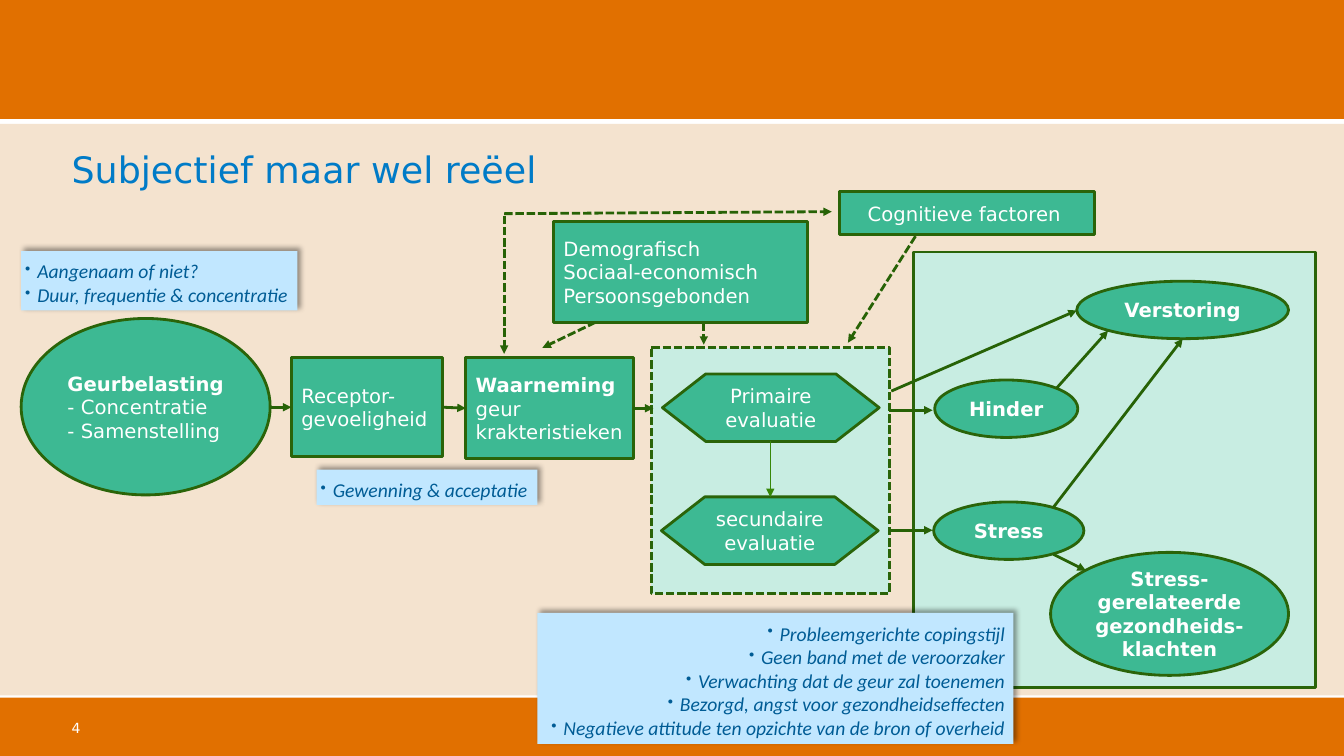
from dataclasses import dataclass

from pptx import Presentation, util as u
from pptx.dml.color import RGBColor
from pptx.enum import dml, shapes, text
from pptx.oxml import parse_xml
from pptx.oxml.ns import nsdecls


@dataclass(frozen=True)
class Theme:
    orange: str = "E17000"
    sand: str = "F4E3CF"
    green: str = "3DB993"
    mint: str = "C8EDE2"
    border: str = "2A6409"
    arrow: str = "276206"
    thin_arrow: str = "378709"
    sky: str = "C1E7FF"
    note_text: str = "005C95"
    title: str = "007BC7"
    white: str = "FFFFFF"
    font: str = "DejaVu Sans"
    note_font: str = "Calibri"
    title_pt: int = 26
    body_pt: int = 14
    number_pt: int = 10
    line_pt: float = 2
    thin_pt: float = 0.75


T = Theme()
PX = u.Inches(0.01)
S = shapes.MSO_SHAPE
LEFT, CENTER, RIGHT = text.PP_ALIGN.LEFT, text.PP_ALIGN.CENTER, text.PP_ALIGN.RIGHT
WIDTH, HEIGHT = 1333, 750

TITLE = "Subjectief maar wel reëel"
NUMBER = "4"

BANDS = [
    (0, 692, WIDTH, 58, T.orange),
    (0, 0, WIDTH, 118, T.orange),
    (0, 123, WIDTH, 567, T.sand),
]

PANELS = [
    ((646, 345, 236, 244), True),
    ((906, 250, 399, 432), False),
]

NODES = [
    (S.OVAL, (21, 316, 247, 175), LEFT,
     [[("Geurbelasting", True)], [("- Concentratie", False)], [("- Samenstelling", False)]]),
    (S.RECTANGLE, (289, 355, 150, 98), LEFT, [[("Receptor-gevoeligheid", False)]]),
    (S.RECTANGLE, (462, 355, 166, 100), LEFT,
     [[("Waarneming ", True), ("geur krakteristieken", False)]]),
    (S.FLOWCHART_PREPARATION, (657, 371, 215, 67), CENTER, [[("Primaire evaluatie", False)]]),
    (S.FLOWCHART_PREPARATION, (656, 493, 215, 67), CENTER, [[("secundaire evaluatie", False)]]),
    (S.OVAL, (1068, 279, 210, 57), CENTER, [[("Verstoring", True)]]),
    (S.OVAL, (927, 377, 142, 57), CENTER, [[("Hinder", True)]]),
    (S.OVAL, (926, 498, 149, 57), CENTER, [[("Stress", True)]]),
    (S.OVAL, (1042, 548, 236, 122), CENTER,
     [[("Stress-gerelateerde gezondheids-klachten", True)]]),
]

FACTORS = [
    (S.RECTANGLE, (833, 190, 253, 43), CENTER, [[("Cognitieve factoren ", False)]]),
    (S.RECTANGLE, (549, 220, 252, 100), LEFT,
     [[("Demografisch", False)], [("Sociaal-economisch", False)], [("Persoonsgebonden", False)]]),
]

SOLID_ARROWS = [
    (268, 404, 289, 404),
    (439, 404, 462, 405),
    (628, 405, 648, 405),
    (882, 407, 925, 407),
    (882, 526, 925, 526),
    (1048, 385, 1099, 328),
    (1045, 503, 1173, 336),
    (1045, 550, 1077, 566),
    (884, 388, 1068, 308),
]
DASHED_ARROWS = [
    (611, 310, 538, 345),
    (698, 309, 698, 342),
    (926, 206, 841, 340),
    (500, 214, 500, 351),
    (500, 212, 825, 210),
]
THIN_ARROW = (764, 438, 764, 493)

NOTES = [
    ((21, 249, 274, 59), LEFT, False, ["Aangenaam of niet?", "Duur, frequentie & concentratie"]),
    ((314, 466, 219, 35), LEFT, False, ["Gewenning & acceptatie"]),
    ((533, 608, 472, 130), RIGHT, True, [
        "Probleemgerichte copingstijl",
        "Geen band met de veroorzaker",
        "Verwachting dat de geur zal toenemen",
        "Bezorgd, angst voor gezondheidseffecten",
        "Negatieve attitude ten opzichte van de bron of overheid",
    ]),
]


def px(values):
    return [v * PX for v in values]


def set_margins(tf, left, top, right, bottom):
    tf.margin_left, tf.margin_top, tf.margin_right, tf.margin_bottom = px((left, top, right, bottom))


def add_run(p, content, color, size=T.body_pt, font=T.font, bold=False, italic=False):
    r = p.add_run()
    r.text = content
    r.font.name, r.font.size = font, u.Pt(size)
    r.font.bold, r.font.italic = bold, italic
    r.font.color.rgb = RGBColor.from_string(color)


def paragraphs(tf, items):
    for i, item in enumerate(items):
        yield (tf.add_paragraph() if i else tf.paragraphs[0]), item


def add_box(s, kind, box, fill, border=None, dashed=False):
    sp = s.shapes.add_shape(kind, *px(box))
    sp.shadow.inherit = False
    sp.fill.solid()
    sp.fill.fore_color.rgb = RGBColor.from_string(fill)
    if border:
        sp.line.color.rgb = RGBColor.from_string(border)
        sp.line.width = u.Pt(T.line_pt)
        if dashed:
            sp.line.dash_style = dml.MSO_LINE.SQUARE_DOT
    else:
        sp.line.fill.background()
    return sp


def add_node(s, kind, box, align, lines):
    tf = add_box(s, kind, box, T.green, T.border).text_frame
    tf.word_wrap = True
    tf.vertical_anchor = text.MSO_ANCHOR.MIDDLE
    if align == LEFT:
        tf.margin_right = 0
    for p, runs in paragraphs(tf, lines):
        p.alignment = align
        for content, bold in runs:
            add_run(p, content, T.white, bold=bold)


def add_arrow(s, ends, color=T.arrow, width=T.line_pt, dashed=False):
    c = s.shapes.add_connector(shapes.MSO_CONNECTOR.STRAIGHT, *px(ends))
    c.line.color.rgb = RGBColor.from_string(color)
    c.line.width = u.Pt(width)
    if dashed:
        c.line.dash_style = dml.MSO_LINE.SQUARE_DOT
    c.line._get_or_add_ln().append(parse_xml(f'<a:tailEnd {nsdecls("a")} type="triangle"/>'))
    c._element.spPr.append(parse_xml(f'<a:effectLst {nsdecls("a")}/>'))


def add_note(s, box, align, wrap, lines):
    sp = add_box(s, S.RECTANGLE, box, T.sky)
    sp._element.spPr.find("{*}effectLst").append(parse_xml(
        f'<a:outerShdw {nsdecls("a")} blurRad="{u.Pt(4)}" dist="{u.Pt(3)}" dir="18900000" '
        'algn="bl" rotWithShape="0"><a:srgbClr val="000000"><a:alpha val="40000"/>'
        '</a:srgbClr></a:outerShdw>'))
    tf = sp.text_frame
    set_margins(tf, 4, 8, 8, 4)
    tf.word_wrap = wrap
    tf.auto_size = text.MSO_AUTO_SIZE.SHAPE_TO_FIT_TEXT
    tf.vertical_anchor = text.MSO_ANCHOR.MIDDLE
    for p, line in paragraphs(tf, lines):
        p.alignment = align
        pPr = p._p.get_or_add_pPr()
        pPr.set("marL", str(12 * PX))
        pPr.set("indent", str(-12 * PX))
        for bullet in ('buSzPct {} val="79000"', 'buChar {} char="•"'):
            pPr.append(parse_xml(f'<a:{bullet.format(nsdecls("a"))}/>'))
        add_run(p, line, T.note_text, font=T.note_font, italic=True)


def main():
    prs = Presentation()
    prs.slide_width, prs.slide_height = px((WIDTH, HEIGHT))
    s = prs.slides.add_slide(prs.slide_layouts[5])
    for *box, fill in BANDS:
        add_box(s, S.RECTANGLE, box, fill)

    title = s.shapes.title
    title.left, title.top, title.width, title.height = px((71, 140, 1192, 49))
    tf = title.text_frame
    set_margins(tf, 0, 0, 0, 0)
    tf.word_wrap = False
    tf.auto_size = text.MSO_AUTO_SIZE.NONE
    tf.vertical_anchor = text.MSO_ANCHOR.BOTTOM
    tf.paragraphs[0].alignment = LEFT
    add_run(tf.paragraphs[0], TITLE, T.title, T.title_pt)
    s.shapes._spTree.append(title._element)

    for box, dashed in PANELS:
        add_box(s, S.FLOWCHART_PROCESS, box, T.mint, T.border, dashed)
    for node in NODES:
        add_node(s, *node)
    for ends in SOLID_ARROWS:
        add_arrow(s, ends)
    for ends in DASHED_ARROWS:
        add_arrow(s, ends, dashed=True)
    add_arrow(s, THIN_ARROW, T.thin_arrow, T.thin_pt)
    for note in NOTES:
        add_note(s, *note)
    for factor in FACTORS:
        add_node(s, *factor)

    tf = s.shapes.add_textbox(*px((71, 714, 53, 16))).text_frame
    set_margins(tf, 0, 0, 0, 0)
    tf.word_wrap = True
    add_run(tf.paragraphs[0], NUMBER, T.white, T.number_pt)
    prs.save("out.pptx")


if __name__ == "__main__":
    main()
